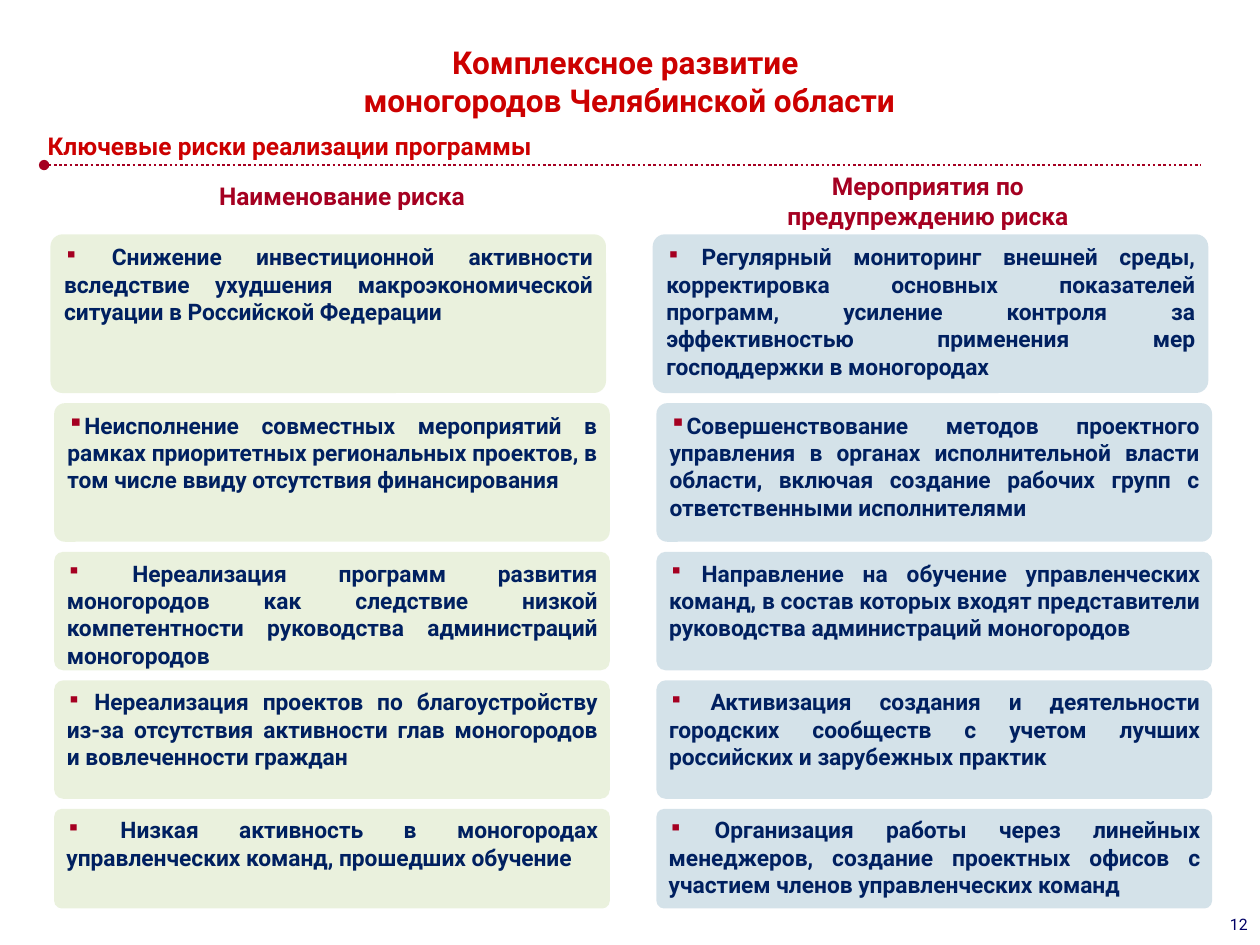
import lxml.etree
import pptx
import pptx.dml.color
import pptx.enum.dml
import pptx.enum.shapes
import pptx.enum.text
import pptx.oxml.ns
import pptx.util
from dataclasses import dataclass

Inches = pptx.util.Inches
Pt = pptx.util.Pt
qn = pptx.oxml.ns.qn
ALIGN = pptx.enum.text.PP_ALIGN


@dataclass(frozen=True)
class Theme:
    font: str = "Roboto"
    red: str = "CC0000"
    crimson: str = "A50021"
    navy: str = "002060"
    page_blue: str = "000066"
    risk_green: str = "D7E4BD"
    action_blue: str = "ABC6D5"
    title_size: int = 18
    heading_size: int = 14
    body_size: int = 13
    spacer_size: int = 11
    page_size: int = 9


THEME = Theme()
CARD_WIDTH = 4.41
COLUMN_STEP = 4.78
ROW_GAP = 0.08

# Card height, left edge, risk, preventive action
RISKS = [
    (1.26, 0.4,
     " Снижение инвестиционной активности вследствие ухудшения "
     "макроэкономической ситуации в Российской Федерации",
     " Регулярный мониторинг внешней среды, корректировка основных показателей "
     "программ, усиление контроля за эффективностью применения мер "
     "господдержки в моногородах"),
    (1.1, 0.43,
     "Неисполнение совместных мероприятий в рамках приоритетных региональных "
     "проектов, в том числе ввиду отсутствия финансирования",
     "Совершенствование методов проектного управления в органах исполнительной "
     "власти области, включая создание рабочих групп с ответственными "
     "исполнителями"),
    (0.94, 0.43,
     " Нереализация программ развития моногородов как следствие низкой "
     "компетентности руководства администраций моногородов",
     " Направление на обучение управленческих команд, в состав которых входят "
     "представители руководства администраций моногородов"),
    (0.94, 0.43,
     " Нереализация проектов по благоустройству из-за отсутствия активности "
     "глав моногородов и вовлеченности граждан",
     " Активизация создания и деятельности городских сообществ с учетом лучших "
     "российских и зарубежных практик"),
    (0.79, 0.43,
     " Низкая активность в моногородах управленческих команд, прошедших обучение",
     " Организация работы через линейных менеджеров, создание проектных офисов "
     "с участием членов управленческих команд"),
]


def rgb(value):
    return pptx.dml.color.RGBColor.from_string(value)


def set_font(font, size, color, bold=True):
    formats = {"name": THEME.font, "size": Pt(size), "bold": bold}
    for name, value in formats.items():
        setattr(font, name, value)
    font.color.rgb = rgb(color)


def set_frame(frame, side, edge):
    formats = {
        "word_wrap": True,
        "vertical_anchor": pptx.enum.text.MSO_ANCHOR.TOP,
        "margin_left": Inches(side), "margin_right": Inches(side),
        "margin_top": Inches(edge), "margin_bottom": Inches(edge),
    }
    for name, value in formats.items():
        setattr(frame, name, value)


def add_title(slide, box, text):
    title = slide.shapes.title
    for name, value in zip(("left", "top", "width", "height"), box):
        setattr(title, name, Inches(value))
    set_frame(title.text_frame, 0.1, 0.05)
    title.text_frame.text = text
    paragraph = title.text_frame.paragraphs[0]
    paragraph.alignment = ALIGN.CENTER
    for run in paragraph.runs:
        set_font(run.font, THEME.title_size, THEME.red)


def add_label(slide, box, text, size, color, align, bold=True):
    label = slide.shapes.add_textbox(*map(Inches, box))
    set_frame(label.text_frame, 0.1, 0.05)
    paragraph = label.text_frame.paragraphs[0]
    paragraph.alignment = align
    run = paragraph.add_run()
    run.text = text
    set_font(run.font, size, color, bold)


def add_divider(slide, left, right, top):
    """Dotted rule that starts with a round dot."""
    divider = slide.shapes.add_connector(
        pptx.enum.shapes.MSO_CONNECTOR.STRAIGHT,
        Inches(left), Inches(top), Inches(right), Inches(top))
    divider.line.color.rgb = rgb(THEME.crimson)
    divider.line.width = Pt(1.5)
    divider.line.dash_style = pptx.enum.dml.MSO_LINE.ROUND_DOT
    properties = divider._element.spPr
    lxml.etree.SubElement(properties.find(qn("a:ln")), qn("a:headEnd"), type="oval")
    lxml.etree.SubElement(properties, qn("a:effectLst"))


def add_bullet(paragraph):
    properties = paragraph._p.get_or_add_pPr()
    properties.set("marL", "0")
    properties.set("indent", "0")
    color = lxml.etree.SubElement(properties, qn("a:buClr"))
    lxml.etree.SubElement(color, qn("a:srgbClr"), val=THEME.crimson)
    lxml.etree.SubElement(properties, qn("a:buChar"), char="▪")


def add_card(slide, box, text, color):
    card = slide.shapes.add_shape(
        pptx.enum.shapes.MSO_SHAPE.ROUNDED_RECTANGLE, *map(Inches, box))
    card.adjustments[0] = 0.077
    card.shadow.inherit = False
    card.line.fill.background()
    card.fill.solid()
    card.fill.fore_color.rgb = rgb(color)
    tint = card._element.spPr.find(qn("a:solidFill")).find(qn("a:srgbClr"))
    lxml.etree.SubElement(tint, qn("a:alpha"), val="50000")

    set_frame(card.text_frame, 0.08, 0.04)
    paragraph = card.text_frame.paragraphs[0]
    paragraph.alignment = ALIGN.JUSTIFY
    add_bullet(paragraph)
    wording = text.lstrip()
    parts = [(wording, THEME.body_size)]
    if wording != text:
        parts.insert(0, (" ", THEME.spacer_size))
    for part, size in parts:
        run = paragraph.add_run()
        run.text = part
        set_font(run.font, size, THEME.navy)


def add_risk_cards(slide, top):
    for height, left, risk, action in RISKS:
        add_card(slide, (left, top, CARD_WIDTH, height), risk, THEME.risk_green)
        add_card(slide, (left + COLUMN_STEP, top, CARD_WIDTH, height),
                 action, THEME.action_blue)
        top += height + ROW_GAP


def main():
    deck = pptx.Presentation()
    deck.slide_width = Inches(10)
    deck.slide_height = Inches(7.5)
    slide = deck.slides.add_slide(deck.slide_layouts.get_by_name("Title Only"))

    add_title(slide, (1.53, 0.29, 6.93, 0.71),
              "Комплексное развитие \vмоногородов Челябинской области")
    add_label(slide, (0.28, 0.99, 6.3, 0.34), "Ключевые риски реализации программы",
              THEME.heading_size, THEME.red, ALIGN.LEFT)
    add_divider(slide, 0.35, 9.53, 1.31)
    add_label(slide, (9.41, 7.21, 0.59, 0.25), "12",
              THEME.page_size, THEME.page_blue, ALIGN.RIGHT, bold=False)
    add_label(slide, (1.22, 1.39, 2.99, 0.34), "Наименование риска",
              THEME.heading_size, THEME.crimson, ALIGN.CENTER)
    add_label(slide, (5.87, 1.31, 2.99, 0.57), "Мероприятия по предупреждению риска",
              THEME.heading_size, THEME.crimson, ALIGN.CENTER)
    add_risk_cards(slide, 1.86)
    deck.save("out.pptx")


if __name__ == "__main__":
    main()
